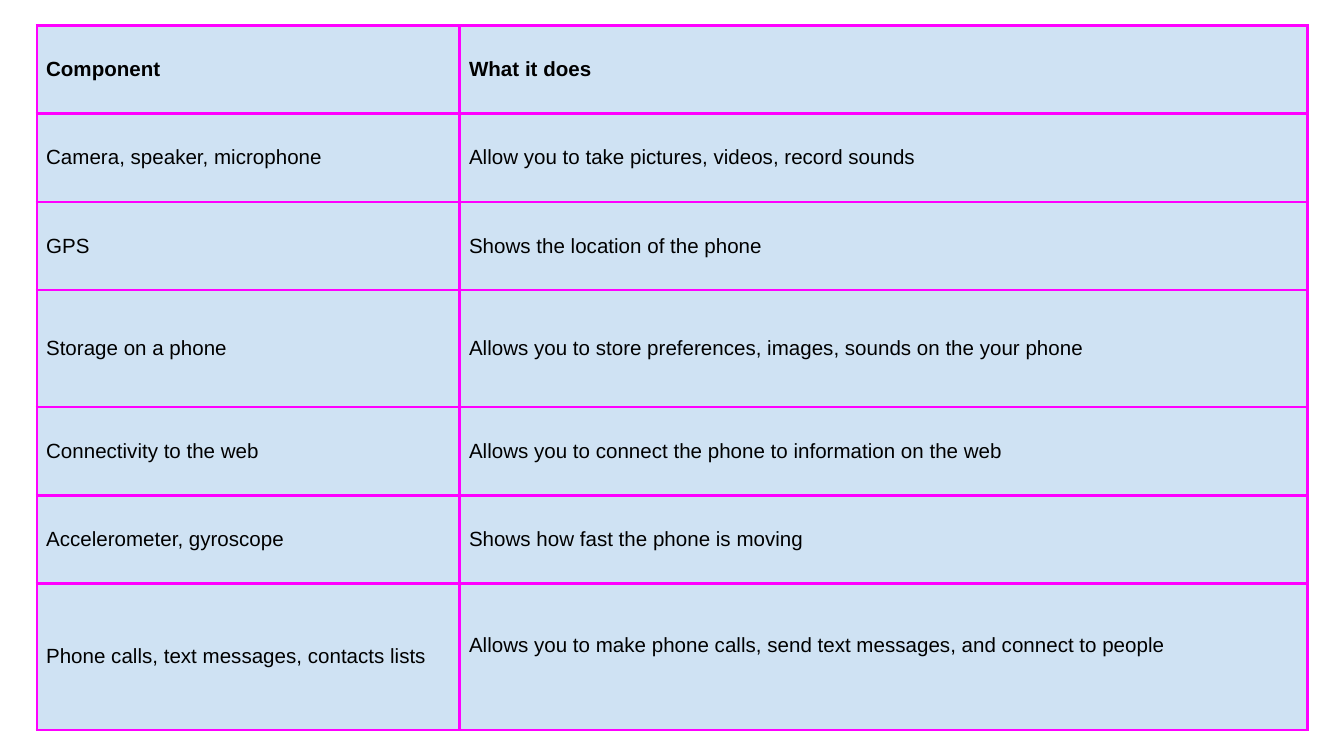
from lxml import etree
from pptx import Presentation
from pptx.dml.color import RGBColor
from pptx.enum.text import MSO_ANCHOR
from pptx.oxml.ns import qn
from pptx.util import Pt

MIDDLE = MSO_ANCHOR.MIDDLE
BLACK = RGBColor(0x00, 0x00, 0x00)
PALE_BLUE = RGBColor(0xCF, 0xE2, 0xF3)
MAGENTA = RGBColor(0xFF, 0x00, 0xFF)

COLUMN_WIDTHS = [226.6, 454.3]
ROW_HEIGHTS = [47.25, 47.25, 47.25, 62.8, 47.25, 47.25, 78.6]
INSET = 5
LAST_CELL_BOTTOM = 17.6  # lifts the last description above the middle

ROWS = [
    ("Component", "What it does"),
    ("Camera, speaker, microphone",
     "Allow you to take pictures, videos, record sounds"),
    ("GPS", "Shows the location of the phone"),
    ("Storage on a phone",
     "Allows you to store preferences, images, sounds on the your phone"),
    ("Connectivity to the web",
     "Allows you to connect the phone to information on the web"),
    ("Accelerometer, gyroscope", "Shows how fast the phone is moving"),
    ("Phone calls, text messages, contacts lists",
     "Allows you to make phone calls, send text messages, and connect to people"),
]


def set_attributes(target, values):
    for name, value in values.items():
        setattr(target, name, value)


def add_borders(cell, color, width):
    properties = cell._tc.get_or_add_tcPr()
    for side in ("lnL", "lnR", "lnT", "lnB"):
        line = etree.SubElement(properties, qn(f"a:{side}"), w=str(Pt(width)))
        fill = etree.SubElement(line, qn("a:solidFill"))
        etree.SubElement(fill, qn("a:srgbClr"), val=str(color))


def format_cell(cell, text, bold):
    # Borders come before the fill in the cell properties
    add_borders(cell, MAGENTA, 1.5)
    cell.fill.solid()
    cell.fill.fore_color.rgb = PALE_BLUE
    set_attributes(cell, {
        "text": text,
        "vertical_anchor": MIDDLE,
        "margin_left": Pt(INSET),
        "margin_right": Pt(INSET),
        "margin_top": Pt(INSET),
        "margin_bottom": Pt(INSET),
    })
    font = cell.text_frame.paragraphs[0].runs[0].font
    set_attributes(font, {"name": "Arial", "size": Pt(11), "bold": bold})
    font.color.rgb = BLACK


def add_component_table(page, left, top):
    frame = page.shapes.add_table(
        len(ROWS), len(COLUMN_WIDTHS), Pt(left), Pt(top),
        Pt(sum(COLUMN_WIDTHS)), Pt(sum(ROW_HEIGHTS)))
    table = frame.table
    set_attributes(table, {"first_row": False, "horz_banding": False})

    # Grid sizes
    for column, width in zip(table.columns, COLUMN_WIDTHS):
        column.width = Pt(width)
    for row, height in zip(table.rows, ROW_HEIGHTS):
        row.height = Pt(height)

    # Cell contents
    for row_index, texts in enumerate(ROWS):
        for column_index, text in enumerate(texts):
            format_cell(table.cell(row_index, column_index), text,
                        bold=row_index == 0)
    table.cell(len(ROWS) - 1, 1).margin_bottom = Pt(LAST_CELL_BOTTOM)


def main():
    deck = Presentation()
    set_attributes(deck, {"slide_width": Pt(720), "slide_height": Pt(405)})
    page = deck.slides.add_slide(deck.slide_layouts[6])
    add_component_table(page, left=19.7, top=13.7)
    deck.save("out.pptx")


if __name__ == "__main__":
    main()
